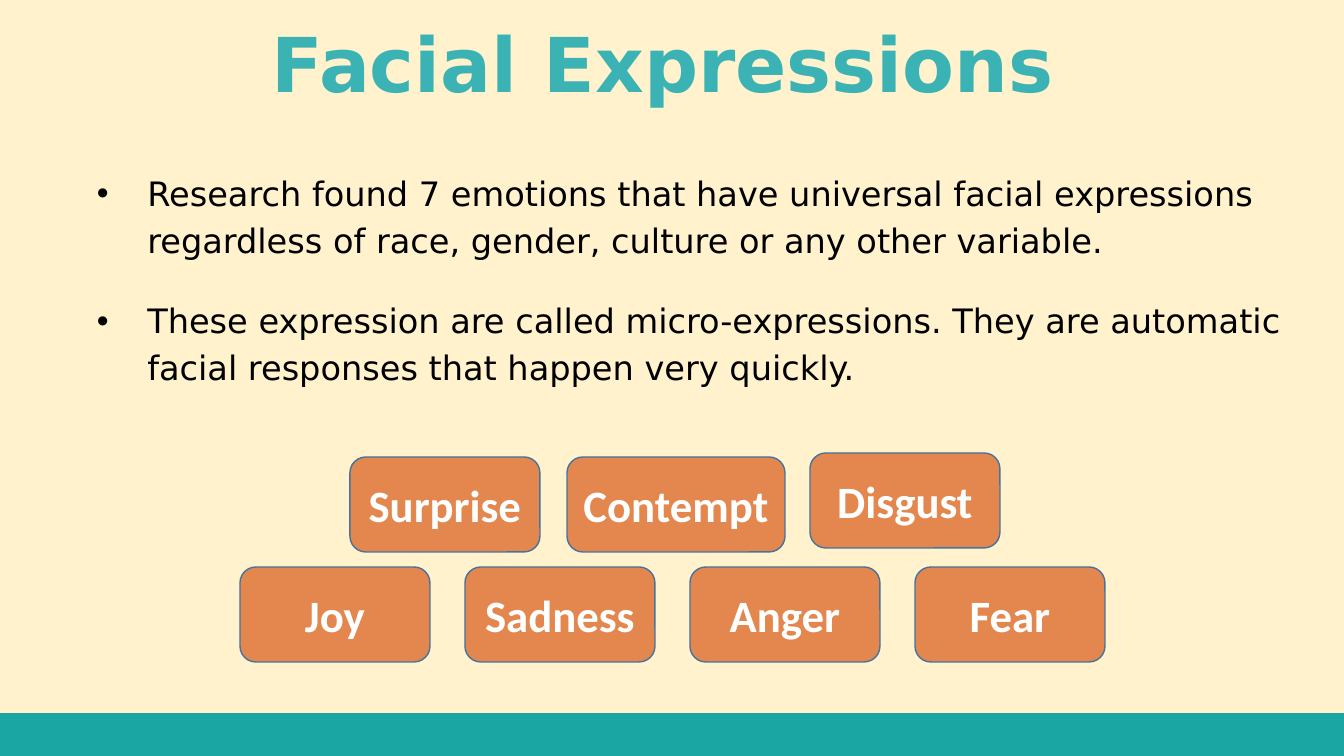
from lxml import etree
from pptx import Presentation
from pptx.dml.color import RGBColor
from pptx.enum.shapes import MSO_SHAPE
from pptx.enum.text import MSO_ANCHOR, PP_ALIGN
from pptx.oxml.ns import qn
from pptx.util import Emu, Pt

RECT, ROUNDED = MSO_SHAPE.RECTANGLE, MSO_SHAPE.ROUNDED_RECTANGLE
CENTER, MIDDLE = PP_ALIGN.CENTER, MSO_ANCHOR.MIDDLE
PX = 914400 / 100.8  # EMU per px

THEME = {
    "background": "FFF2CC", "title": "3BB2B3", "body": "000000",
    "card": "E4874E", "card_line": "43739E", "card_text": "FFFFFF",
    "footer": "1AA7A4",
    "text_font": "DejaVu Sans", "card_font": "Calibri",
    "title_size": 54, "body_size": 24, "card_size": 32,
}


def set_font(p, face, size, color, bold=False):
    p.font.name = THEME[face]
    p.font.size = Pt(THEME[size])
    p.font.bold = bold
    p.font.color.rgb = RGBColor.from_string(THEME[color])


def add_box(kind, box, fill, line):
    sp = s.shapes.add_shape(kind, *(Emu(round(v * PX)) for v in box))
    sp.shadow.inherit = False
    sp.fill.solid()
    sp.fill.fore_color.rgb = RGBColor.from_string(THEME[fill])
    sp.line.color.rgb = RGBColor.from_string(THEME[line])
    sp.line.width = Pt(1)
    return sp


prs = Presentation()
prs.slide_width, prs.slide_height = Emu(round(1344 * PX)), Emu(round(756 * PX))
s = prs.slides.add_slide(prs.slide_layouts[6])
s.background.fill.solid()
s.background.fill.fore_color.rgb = RGBColor.from_string(THEME["background"])

# Title
title = s.shapes.add_textbox(*(Emu(round(v * PX)) for v in (65, 12, 1222, 102)))
title.text_frame.word_wrap = True
p = title.text_frame.paragraphs[0]
p.text = "Facial Expressions "
p.alignment = CENTER
set_font(p, "text_font", "title_size", "title", bold=True)

# Bulleted findings
findings = [
    "Research found 7 emotions that have universal facial expressions "
    "regardless of race, gender, culture or any other variable.",
    "These expression are called micro-expressions. They are automatic "
    "facial responses that happen very quickly.",
]
body = s.shapes.add_textbox(*(Emu(round(v * PX)) for v in (87, 161, 1205, 313)))
tf = body.text_frame
tf.word_wrap = True
for i, finding in enumerate(findings):
    p = tf.add_paragraph() if i else tf.paragraphs[0]
    p.text = finding
    p.line_spacing = Pt(33.6)
    p.space_after = Pt(24)
    set_font(p, "text_font", "body_size", "body")
    pPr = p._p.get_or_add_pPr()
    pPr.set("marL", "457200")
    pPr.set("indent", "-457200")
    bullet_font = etree.Element(qn("a:buFont"), typeface="Arial")
    bullet = etree.Element(qn("a:buChar"), char="•")
    pPr.find(qn("a:defRPr")).addprevious(bullet_font)
    bullet_font.addnext(bullet)

# Emotion cards: an even lower row, then the upper row
CARD_W, CARD_H, CARD_PITCH = 190, 95, 225
cards = [(name, 240 + i * CARD_PITCH, 567, CARD_W)
         for i, name in enumerate(["Joy", "Sadness", "Anger", "Fear"])]
cards += [("Surprise", 350, 457, CARD_W),
          ("Disgust", 810, 453, CARD_W),
          ("Contempt", 567, 457, 218)]
for name, left, top, width in cards:
    sp = add_box(ROUNDED, (left, top, width, CARD_H), "card", "card_line")
    sp.text_frame.word_wrap = True
    sp.text_frame.vertical_anchor = MIDDLE
    p = sp.text_frame.paragraphs[0]
    p.text = name
    p.alignment = CENTER
    set_font(p, "card_font", "card_size", "card_text", bold=True)

# Footer band
add_box(RECT, (0, 714, 1344, 42), "footer", "footer")

prs.save("out.pptx")
